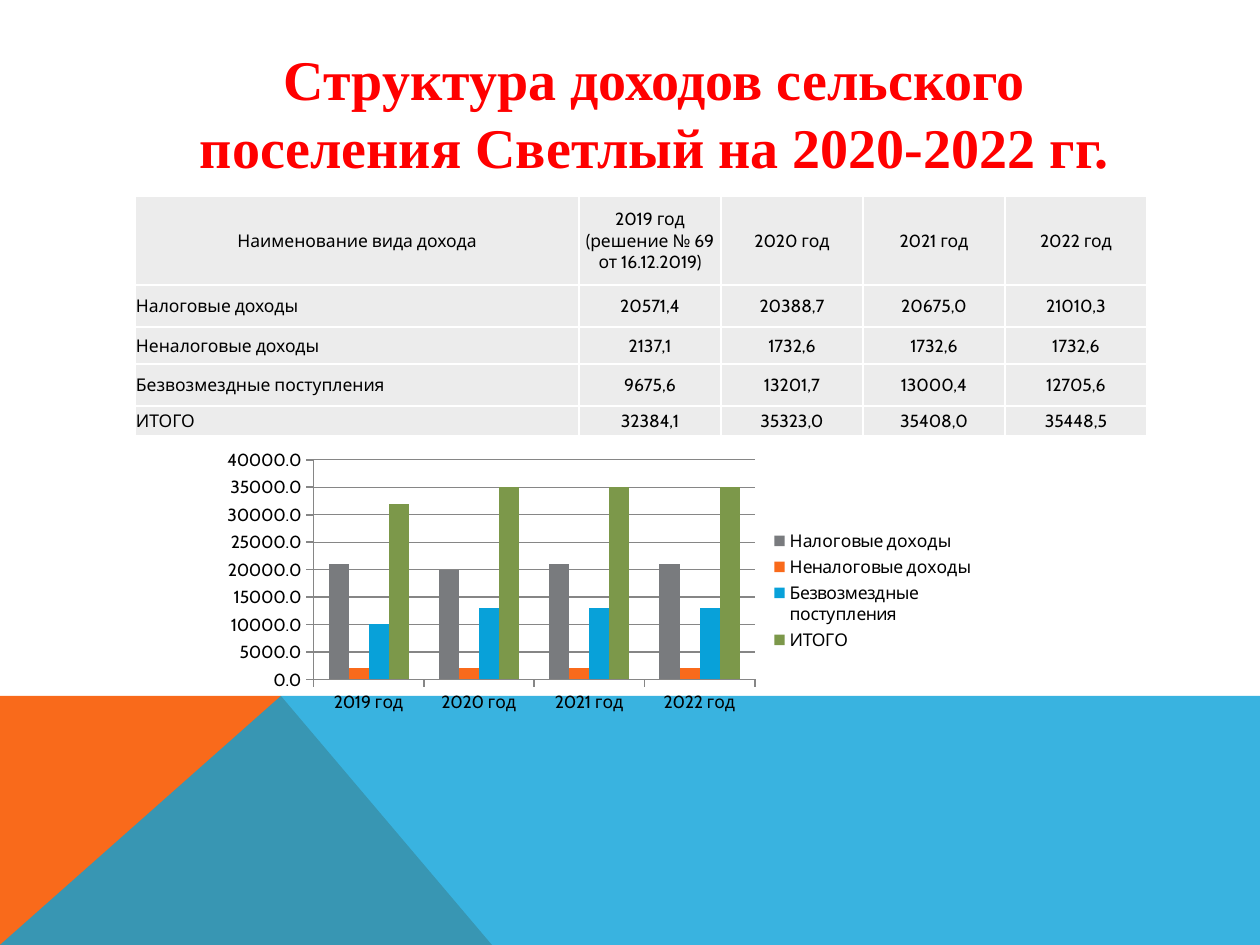
from dataclasses import dataclass

from lxml import etree
from pptx import Presentation
from pptx.chart.data import CategoryChartData
from pptx.enum.chart import XL_CHART_TYPE, XL_LEGEND_POSITION, XL_TICK_MARK
from pptx.dml.color import RGBColor
from pptx.enum.text import MSO_ANCHOR, MSO_AUTO_SIZE, PP_ALIGN
from pptx.oxml.ns import qn
from pptx.util import Emu, Pt

COLUMN = XL_CHART_TYPE.COLUMN_CLUSTERED
RIGHT = XL_LEGEND_POSITION.RIGHT
OUT = XL_TICK_MARK.OUTSIDE
MIDDLE = MSO_ANCHOR.MIDDLE
LEFT, CENTER = PP_ALIGN.LEFT, PP_ALIGN.CENTER
SCALE = 914400 / 126


@dataclass(frozen=True)
class Theme:
    head: str = "Times New Roman"
    body: str = "Cabin"
    big: int = 32
    small: int = 10
    red: str = "FF0000"
    ink: str = "000000"
    white: str = "FFFFFF"
    cell: str = "ECECEC"
    line: str = "868686"
    gray: str = "797B7E"
    orange: str = "F96A1B"
    blue: str = "08A1D9"
    green: str = "7C984A"


THEME = Theme()
YEARS = ["2019 год", "2020 год", "2021 год", "2022 год"]
NOTE = "\v(решение № 69 от 16.12.2019)"
INCOME = {
    "Налоговые доходы": [20571.4, 20388.7, 20675.0, 21010.3],
    "Неналоговые доходы": [2137.1, 1732.6, 1732.6, 1732.6],
    "Безвозмездные поступления": [9675.6, 13201.7, 13000.4, 12705.6],
    "ИТОГО": [32384.1, 35323.0, 35408.0, 35448.5],
}


def px(num):
    return Emu(round(num * SCALE))


def box(*nums):
    return [px(num) for num in nums]


def rgb(code):
    return RGBColor.from_string(code)


def paint(fill, code):
    fill.solid()
    fill.fore_color.rgb = rgb(code)


def style(font, name, size, code, bold=False):
    font.name, font.size, font.bold = name, Pt(size), bold
    font.color.rgb = rgb(code)


def add_band(slide, points, code, alpha=100):
    form = slide.shapes.build_freeform(*points[0], scale=SCALE)
    form.add_line_segments(points[1:], close=True)
    band = form.convert_to_shape()
    band.shadow.inherit = False
    paint(band.fill, code)
    band.line.fill.background()
    if alpha < 100:
        color = band.fill._xPr.find(".//" + qn("a:srgbClr"))
        etree.SubElement(color, qn("a:alpha"), val=str(alpha * 1000))


def set_title(slide, text):
    title = slide.shapes.title
    title.left, title.top, title.width, title.height = box(163, 38, 983, 158)
    frame = title.text_frame
    frame.word_wrap = True
    frame.auto_size = MSO_AUTO_SIZE.NONE
    frame.vertical_anchor = MIDDLE
    frame.margin_bottom = px(16)
    par = frame.paragraphs[0]
    par.alignment = CENTER
    run = par.add_run()
    run.text = text
    style(run.font, THEME.head, THEME.big, THEME.red, True)


def add_edges(cell):
    props = cell._tc.get_or_add_tcPr()
    for spot, side in enumerate(("lnL", "lnR", "lnT", "lnB")):
        edge = etree.Element(qn("a:" + side), w=str(Pt(1)))
        fill = etree.SubElement(edge, qn("a:solidFill"))
        etree.SubElement(fill, qn("a:srgbClr"), val=THEME.white)
        props.insert(spot, edge)


def fill_cell(cell, text, align):
    cell.margin_left = cell.margin_right = cell.margin_top = px(1)
    cell.margin_bottom = 0
    cell.vertical_anchor = MIDDLE
    paint(cell.fill, THEME.cell)
    add_edges(cell)
    par = cell.text_frame.paragraphs[0]
    par.alignment = align
    for spot, part in enumerate(text.split("\v")):
        if spot:
            par.add_line_break()
        run = par.add_run()
        run.text = part
        style(run.font, THEME.body, THEME.small, THEME.ink)


def add_grid(slide):
    wide, high = [444] + [142] * 4, [89, 42, 37, 42, 30]
    rows = [["Наименование вида дохода", YEARS[0] + NOTE, *YEARS[1:]]]
    for name, sums in INCOME.items():
        rows.append([name] + [f"{num:.1f}".replace(".", ",") for num in sums])
    place = box(135, 196, sum(wide), sum(high))
    table = slide.shapes.add_table(len(rows), len(wide), *place).table
    for col, size in zip(table.columns, wide):
        col.width = px(size)
    for row, size in zip(table.rows, high):
        row.height = px(size)
    for i, row in enumerate(rows):
        for j, text in enumerate(row):
            fill_cell(table.cell(i, j), text, LEFT if i and not j else CENTER)


def set_plot(chart, **parts):
    area = chart._chartSpace.chart.plotArea
    for old in area.findall(qn("c:layout")):
        area.remove(old)
    layout = etree.Element(qn("c:layout"))
    manual = etree.SubElement(layout, qn("c:manualLayout"))
    rules = {"layoutTarget": "inner", "xMode": "edge", "yMode": "edge", **parts}
    for name, val in rules.items():
        etree.SubElement(manual, qn("c:" + name), val=str(val))
    area.insert(0, layout)


def add_bars(slide):
    data = CategoryChartData(number_format="0.0")
    data.categories = YEARS
    for name, sums in INCOME.items():
        data.add_series(name, [round(num, -3) for num in sums])
    chart = slide.shapes.add_chart(COLUMN, *box(213, 442, 774, 297), data).chart
    style(chart.font, THEME.body, THEME.small, THEME.ink)
    chart.has_title = False
    chart.has_legend = True
    chart.legend.position = RIGHT
    chart.legend.include_in_layout = False
    set_plot(chart, x=0.13, y=0.06, w=0.57, h=0.74)
    plot = chart.plots[0]
    plot.gap_width, plot.overlap = 150, 0
    plot.vary_by_categories = False
    codes = (THEME.gray, THEME.orange, THEME.blue, THEME.green)
    for bars, code in zip(plot.series, codes):
        paint(bars.format.fill, code)
    for axis in (chart.category_axis, chart.value_axis):
        axis.major_tick_mark = OUT
        axis.format.line.color.rgb = rgb(THEME.line)
        axis.format.line.width = Pt(1)
    axis = chart.value_axis
    axis.minimum_scale, axis.maximum_scale, axis.major_unit = 0, 40000, 5000
    axis.tick_labels.number_format = "0.0"
    axis.tick_labels.number_format_is_linked = False
    axis.major_gridlines.format.line.color.rgb = rgb(THEME.line)


def main():
    deck = Presentation()
    deck.slide_width, deck.slide_height = box(1260, 945)
    slide = deck.slides.add_slide(deck.slide_layouts[5])
    paint(slide.background.fill, THEME.white)
    add_band(slide, [(0, 945), (0, 696), (281, 696), (492, 945)], THEME.orange)
    add_band(slide, [(0, 945), (281, 696), (1260, 696), (1260, 945)], THEME.blue, 80)
    set_title(slide, "Структура доходов сельского поселения Светлый на 2020-2022 гг.")
    add_grid(slide)
    add_bars(slide)
    deck.save("out.pptx")


if __name__ == "__main__":
    main()
